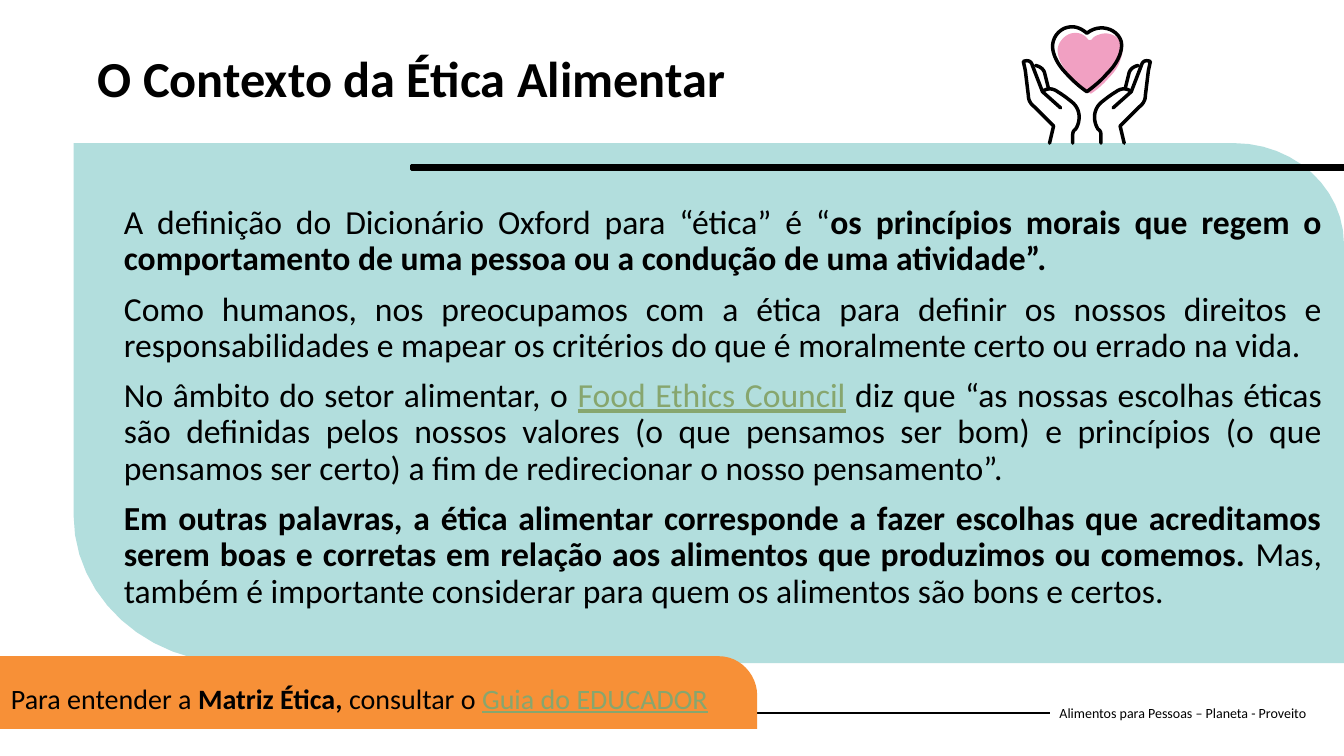
from lxml import etree
from pptx import Presentation
from pptx.dml.color import RGBColor
from pptx.enum.shapes import MSO_CONNECTOR, MSO_SHAPE
from pptx.enum.text import MSO_ANCHOR, MSO_AUTO_SIZE, PP_ALIGN
from pptx.oxml.ns import qn
from pptx.util import Inches, Pt

STRAIGHT = MSO_CONNECTOR.STRAIGHT
RECTANGLE = MSO_SHAPE.RECTANGLE
TOP, MIDDLE = MSO_ANCHOR.TOP, MSO_ANCHOR.MIDDLE
LEFT, JUSTIFY = PP_ALIGN.LEFT, PP_ALIGN.JUSTIFY
NO_AUTOFIT = MSO_AUTO_SIZE.NONE

WIDTH, HEIGHT = 13.33, 7.5
FONT = "Calibri"
COLORS = {"black": "000000", "aqua": "B2DEDD", "orange": "F79037",
          "pink": "F1A0C2", "link": "87A66E"}
CURVE_STEPS = 12

BODY = [
    [("A definição do Dicionário Oxford para “ética” é “", ""),
     ("os princípios morais que regem o comportamento de uma pessoa ou a "
      "condução de uma atividade”.", "bold")],
    [("Como humanos, nos preocupamos com a ética para definir os nossos direitos e "
      "responsabilidades e mapear os critérios do que é moralmente certo ou errado "
      "na vida.", "")],
    [("No âmbito do setor alimentar, o ", ""),
     ("Food Ethics Council", "link"),
     (" diz que “as nossas escolhas éticas são definidas pelos nossos valores "
      "(o que pensamos ser bom) e princípios (o que pensamos ser certo) a fim de "
      "redirecionar o nosso pensamento”.", "")],
    [("Em outras palavras, a ética alimentar corresponde a fazer escolhas que "
      "acreditamos serem boas e corretas em relação aos alimentos que produzimos "
      "ou comemos. ", "bold"),
     ("Mas, também é importante considerar para quem os alimentos são bons e "
      "certos.", "")],
]
GUIDE = [[("Para entender a ", ""), ("Matriz Ética, ", "bold"),
          ("consultar o ", ""), ("Guia do EDUCADOR", "link")]]

HEART_FILL = [
    (36, 25), ((36, 18), (41, 12), (47, 9)), ((54, 6), (62, 8), (66, 14)),
    ((67, 15), (69, 15), (70, 14)), ((72, 11), (75, 10), (78, 9)),
    ((87, 6), (98, 11), (100, 21)), ((101, 25), (100, 30), (98, 35)),
    ((96, 42), (91, 48), (86, 53)), ((81, 59), (75, 64), (69, 68)),
    ((59, 62), (51, 55), (45, 46)), ((42, 42), (36, 34), (36, 25))]
HEART_OUTLINE = [
    (31, 21), ((31, 13), (36, 6), (43, 3)), ((51, 0), (58, 2), (65, 8)),
    ((77, -2), (95, 3), (99, 16)), ((100, 21), (99, 26), (97, 31)),
    ((94, 38), (90, 43), (85, 48)), ((80, 54), (73, 60), (65, 66)),
    ((56, 60), (48, 52), (41, 44)), ((36, 38), (31, 29), (31, 21))]
HAND = [
    [(28, 117), (32, 100), (13, 81), ((9, 78), (7, 74), (7, 70)),
     (4, 45), (2, 36), ((7, 34), (10, 36), (11, 40)), (21, 66), (39, 82)],
    [(14, 40), ((19, 41), (22, 44), (23, 47)), (27, 63)],
    [(22, 65), ((27, 62), (32, 63), (36, 66)), ((41, 69), (45, 72), (50, 76)),
     ((59, 83), (59, 95), (54, 103)), ((51, 105), (51, 107), (51, 110)),
     (51, 117)]]


def rgb(name):
    return RGBColor.from_string(COLORS[name])


def flatten(outline):
    points = [outline[0]]
    for part in outline[1:]:
        if len(part) == 2:
            points.append(part)
            continue
        corners = (points[-1], *part)
        for step in range(1, CURVE_STEPS + 1):
            t = step / CURVE_STEPS
            weights = ((1 - t) ** 3, 3 * t * (1 - t) ** 2, 3 * t * t * (1 - t), t ** 3)
            points.append(tuple(sum(weight * corner[axis] for weight, corner
                                    in zip(weights, corners)) for axis in (0, 1)))
    return points


def paint(shape, fill=None, line=None, line_width=0):
    shape.shadow.inherit = False
    if fill:
        shape.fill.solid()
        shape.fill.fore_color.rgb = rgb(fill)
    else:
        shape.fill.background()
    if line:
        shape.line.color.rgb = rgb(line)
        shape.line.width = Pt(line_width)
    else:
        shape.line.fill.background()


def add_outline(shapes, left, top, outline, scale=1, close=True, **style):
    points = [(Inches(left + x * scale), Inches(top + y * scale))
              for x, y in flatten(outline)]
    builder = shapes.build_freeform(*points[0], scale=1.0)
    builder.add_line_segments(points[1:], close=close)
    shape = builder.convert_to_shape()
    paint(shape, **style)
    return shape


def add_text(slide, left, top, width, height, paragraphs, size, align=LEFT,
             anchor=TOP, wrap=True, line_spacing=1, space_before=0):
    box = slide.shapes.add_textbox(Inches(left), Inches(top),
                                   Inches(width), Inches(height))
    frame = box.text_frame
    frame.word_wrap = wrap
    frame.auto_size = NO_AUTOFIT
    frame.vertical_anchor = anchor
    for index, runs in enumerate(paragraphs):
        paragraph = frame.add_paragraph() if index else frame.paragraphs[0]
        paragraph.alignment = align
        paragraph.line_spacing = line_spacing
        paragraph.space_before = Pt(space_before if index else 0)
        paragraph.font.name = FONT
        paragraph.font.size = Pt(size)
        paragraph.font.color.rgb = rgb("black")
        for text, style in runs:
            run = paragraph.add_run()
            run.text = text
            run.font.name = FONT
            run.font.size = Pt(size)
            run.font.color.rgb = rgb("link" if style == "link" else "black")
            if style == "bold":
                run.font.bold = True
            if style == "link":
                run.font.underline = True
    return box


def add_footer(slide, left, top, width, height):
    box = add_text(slide, left, top, width, height,
                   [[("Alimentos para Pessoas – Planeta - Proveito", "")]],
                   10, anchor=MIDDLE)
    middle = Inches(top + height / 2)
    rule = slide.shapes.add_connector(STRAIGHT, 0, middle, Inches(left), middle)
    rule.end_connect(box, 1)
    rule.line.color.rgb = rgb("black")
    rule.line.width = Pt(1.5)
    etree.SubElement(rule.element.spPr, qn("a:effectLst"))


def add_body_panel(slide, left, top, width, height):
    outline = [(0, 0), (width - 1.09, 0),
               ((width - 0.49, 0), (width, 0.45), (width, 1)),
               (width, height), (1.61, height),
               ((0.72, height), (0, height - 0.66), (0, height - 1.47))]
    add_outline(slide.shapes, left, top, outline, fill="aqua")
    add_text(slide, left + 0.4, top + 0.57, 12.08, 3.76, BODY, 24,
             JUSTIFY, line_spacing=0.9, space_before=10)


def add_guide_banner(slide, left, top, width, height):
    outline = [(0, height), (0, 0), (width - 0.38, 0),
               ((width - 0.17, 0), (width, 0.18), (width, 0.39)), (width, height)]
    add_outline(slide.shapes, left, top, outline, fill="orange")
    add_text(slide, left + 0.01, top + 0.2, 7.17, 0.44, GUIDE, 20, wrap=False)


def add_heading(slide, left, top, width, height):
    add_text(slide, left, top, width, height,
             [[("O Contexto da Ética Alimentar", "bold")]], 36, line_spacing=0.9)
    bar = slide.shapes.add_shape(RECTANGLE, Inches(4.08), Inches(top + 1.15),
                                 Inches(WIDTH - 4.08), Inches(0.04))
    paint(bar, "black", "black", 1.93)


def add_heart_in_hands(slide, left, top, width):
    shapes = slide.shapes.add_group_shape().shapes
    scale = width / 130
    add_outline(shapes, left, top, HEART_FILL, scale, fill="pink")
    mirrored = [[(130 - part[0], part[1]) if len(part) == 2
                 else tuple((130 - x, y) for x, y in part)
                 for part in stroke] for stroke in HAND]
    for stroke in [HEART_OUTLINE] + HAND + mirrored:
        shape = add_outline(shapes, left, top, stroke, scale,
                            close=stroke is HEART_OUTLINE,
                            line="black", line_width=2.5)
        shape.element.spPr.find(qn("a:ln")).set("cap", "rnd")


def main():
    presentation = Presentation()
    presentation.slide_width = Inches(WIDTH)
    presentation.slide_height = Inches(HEIGHT)
    slide = presentation.slides.add_slide(presentation.slide_layouts[6])
    add_footer(slide, 10.41, 6.87, 2.73, 0.4)
    add_body_panel(slide, 0.73, 1.42, 12.6, 5.16)
    add_guide_banner(slide, 0, 6.51, 7.51, 0.72)
    add_heading(slide, 0.87, 0.49, 11.59, 0.88)
    add_heart_in_hands(slide, 10.13, 0.25, 1.3)
    presentation.save("out.pptx")


if __name__ == "__main__":
    main()
